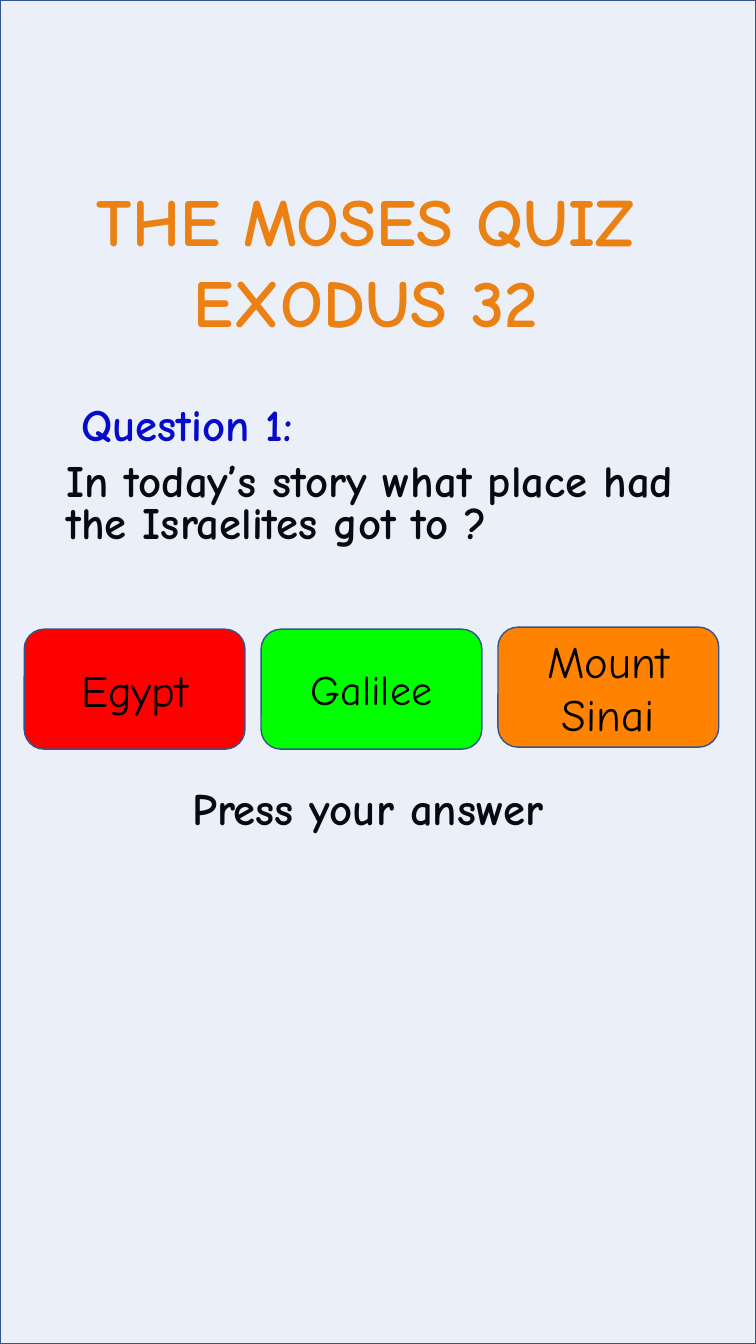
from lxml import etree
from pptx import Presentation, util as u
from pptx.dml.color import RGBColor
from pptx.enum import shapes, text
from pptx.oxml.ns import qn


def colour(value):
    return RGBColor.from_string(value)


def write(box, *lines, size=32, ink="000000", bold=True, align=text.PP_ALIGN.LEFT,
          anchor=text.MSO_ANCHOR.TOP, wrap=True, spacing=1.0, before=0):
    frame = box.text_frame
    frame.auto_size = text.MSO_AUTO_SIZE.NONE
    frame.word_wrap = wrap
    frame.vertical_anchor = anchor
    for index, line in enumerate(lines):
        para = frame.add_paragraph() if index else frame.paragraphs[0]
        para.alignment = align
        para.line_spacing = spacing
        para.space_before = u.Pt(before)
        span = para.add_run()
        span.text = line
        span.font.name = "Comic Neue"
        span.font.size = u.Pt(size)
        span.font.bold = bold
        span.font.color.rgb = colour(ink)


class QuizSlide:
    """Holds the quiz style and the slide being built."""

    border = "325491"

    def __init__(self, deck):
        self.slide = deck.slides.add_slide(deck.slide_layouts[0])

    def placeholder(self, index, left, top, width, height, *lines, **style):
        box = self.slide.placeholders[index]
        box.left, box.top = u.Inches(left), u.Inches(top)
        box.width, box.height = u.Inches(width), u.Inches(height)
        write(box, *lines, **style)

    def label(self, left, top, width, height, *lines, **style):
        box = self.slide.shapes.add_textbox(*map(u.Inches, (left, top, width, height)))
        write(box, *lines, **style)

    def panel(self, kind, left, top, width, height, fill, opacity=100):
        box = self.slide.shapes.add_shape(kind, *map(u.Inches, (left, top, width, height)))
        box.shadow.inherit = False
        box.fill.solid()
        box.fill.fore_color.rgb = colour(fill)
        box.line.color.rgb = colour(self.border)
        box.line.width = u.Pt(1)
        if opacity < 100:
            shade = box.fill._xPr.find(qn("a:solidFill"))[0]
            etree.SubElement(shade, qn("a:alpha")).set("val", str(opacity * 1000))
        return box

    def answer(self, left, top, caption, fill, size):
        box = self.panel(shapes.MSO_SHAPE.ROUNDED_RECTANGLE, left, top, 2.19, 1.19, fill)
        write(box, caption, size=size, bold=False, align=text.PP_ALIGN.CENTER,
              anchor=text.MSO_ANCHOR.MIDDLE)


def main():
    deck = Presentation()
    deck.slide_width, deck.slide_height = u.Inches(7.5), u.Inches(13.33)
    quiz = QuizSlide(deck)
    centre = text.PP_ALIGN.CENTER

    quiz.placeholder(0, 0.3, 1.73, 6.89, 1.72, "THE MOSES QUIZ ", "EXODUS 32 ",
                     size=48, ink="FF8200", align=centre, wrap=False)
    quiz.label(0.47, 3.89, 2.77, 0.64, "Question 1:", ink="0000CC", align=centre, wrap=False)
    quiz.placeholder(1, 0.56, 4.56, 6.36, 1.19,
                     "In today’s story what place had the Israelites got to ?",
                     spacing=u.Pt(30), before=7.5)
    quiz.label(1.81, 7.75, 4.22, 0.72, "Press your answer", spacing=0.9, before=7.5)
    quiz.panel(shapes.MSO_SHAPE.RECTANGLE, 0, 0, 7.5, 13.33, "4472C4", opacity=10)

    answers = [("Egypt", "FF0000", 32, 6.24), ("Galilee", "00FF00", 30, 6.24),
               ("Mount Sinai", "FF8200", 32, 6.22)]
    for column, (caption, fill, size, top) in enumerate(answers):
        quiz.answer(0.24 + 2.35 * column, top, caption, fill, size)

    deck.save("out.pptx")


if __name__ == "__main__":
    main()
